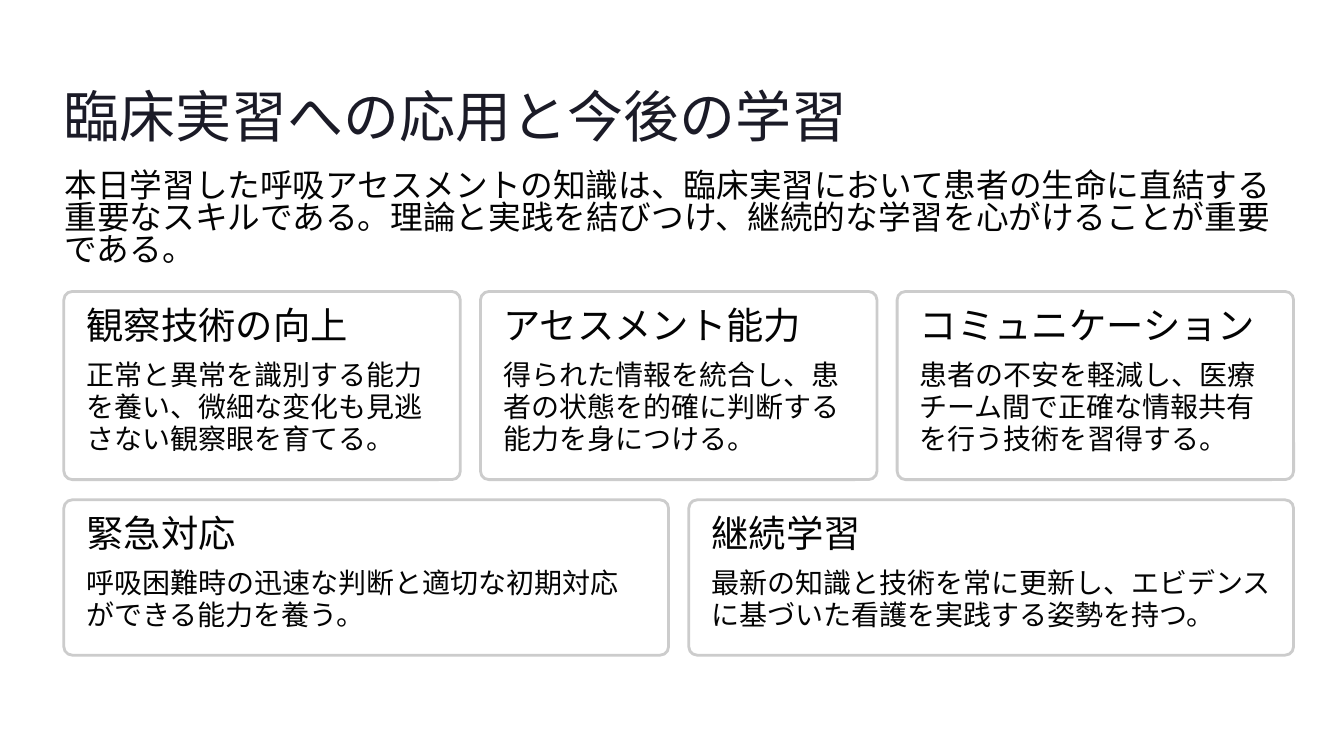
"""Build a slide on applying respiratory assessment in clinical practice."""
from lxml import etree
from pptx import Presentation
from pptx.dml.color import RGBColor
from pptx.enum.shapes import MSO_SHAPE
from pptx.oxml.ns import qn
from pptx.util import Inches, Pt

TITLE = "臨床実習への応用と今後の学習"
INTRO = (
    "本日学習した呼吸アセスメントの知識は、臨床実習において患者の生命に直結する"
    "重要なスキルである。理論と実践を結びつけ、継続的な学習を心がけることが重要である。"
)
CARD_ROWS = [
    {"top": 3.47, "height": 2.24, "corner": 0.045, "cards": [
        ("観察技術の向上", "正常と異常を識別する能力を養い、微細な変化も見逃さない観察眼を育てる。"),
        ("アセスメント能力", "得られた情報を統合し、患者の状態を的確に判断する能力を身につける。"),
        ("コミュニケーション", "患者の不安を軽減し、医療チーム間で正確な情報共有を行う技術を習得する。"),
    ]},
    {"top": 5.95, "height": 1.85, "corner": 0.055, "cards": [
        ("緊急対応", "呼吸困難時の迅速な判断と適切な初期対応ができる能力を養う。"),
        ("継続学習", "最新の知識と技術を常に更新し、エビデンスに基づいた看護を実践する姿勢を持つ。"),
    ]},
]

WHITE = RGBColor(0xFF, 0xFF, 0xFF)
BORDER = RGBColor(0xCC, 0xCC, 0xCC)
NAVY = RGBColor(0x1B, 0x1B, 0x27)
INK = RGBColor(0x03, 0x03, 0x03)

LEFT, TEXT_LEFT, CONTENT_WIDTH, GAP = 0.76, 0.77, 14.64, 0.24
PADDING, HEADING_DROP, BODY_DROP = 0.27, 0.28, 0.8

STYLES = {
    "title": {"font": {"name": "Inter", "size": Pt(48)}, "color": NAVY, "leading": 54.5},
    "intro": {"font": {"name": "Karla", "size": Pt(28)}, "color": INK, "leading": 27.5},
    "heading": {"font": {"name": "Inter", "size": Pt(32)}, "color": INK, "leading": 27},
    "body": {"font": {"name": "Karla", "size": Pt(24)}, "color": INK, "leading": 27.5},
}


def add_text(slide, text, style_name, *bounds):
    style = STYLES[style_name]
    frame = slide.shapes.add_textbox(*map(Inches, bounds)).text_frame
    frame.word_wrap = True
    for side in ("left", "top", "right", "bottom"):
        setattr(frame, f"margin_{side}", 0)
    paragraph = frame.paragraphs[0]
    paragraph.line_spacing = Pt(style["leading"])
    run = paragraph.add_run()
    run.text = text
    for attribute, value in style["font"].items():
        setattr(run.font, attribute, value)
    run.font.color.rgb = style["color"]


def add_panel(slide, corner, *bounds):
    panel = slide.shapes.add_shape(MSO_SHAPE.ROUNDED_RECTANGLE, *map(Inches, bounds))
    panel.adjustments[0] = corner
    panel.shadow.inherit = False
    panel.fill.solid()
    panel.fill.fore_color.rgb = WHITE
    white = panel.fill._xPr.find(qn("a:solidFill"))[0]
    etree.SubElement(white, qn("a:alpha")).set("val", "95000")
    panel.line.color.rgb = BORDER
    panel.line.width = Pt(2.4)


def add_card_row(slide, row):
    top, height, cards = row["top"], row["height"], row["cards"]
    width = (CONTENT_WIDTH - GAP * (len(cards) - 1)) / len(cards)
    text_width = width - 2 * PADDING
    for column, (heading, body) in enumerate(cards):
        left = LEFT + column * (width + GAP)
        text_left = left + PADDING
        add_panel(slide, row["corner"], left, top, width, height)
        add_text(slide, heading, "heading", text_left, top + HEADING_DROP, text_width, 0.38)
        add_text(slide, body, "body", text_left, top + BODY_DROP,
                 text_width, height - BODY_DROP - PADDING)


def main():
    deck = Presentation()
    deck.slide_width, deck.slide_height = Inches(16), Inches(9)
    slide = deck.slides.add_slide(deck.slide_layouts[6])
    add_text(slide, TITLE, "title", LEFT, 1.01, CONTENT_WIDTH, 0.76)
    add_text(slide, INTRO, "intro", TEXT_LEFT, 2.05, CONTENT_WIDTH, 1.16)
    for row in CARD_ROWS:
        add_card_row(slide, row)
    deck.save("out.pptx")


if __name__ == "__main__":
    main()
